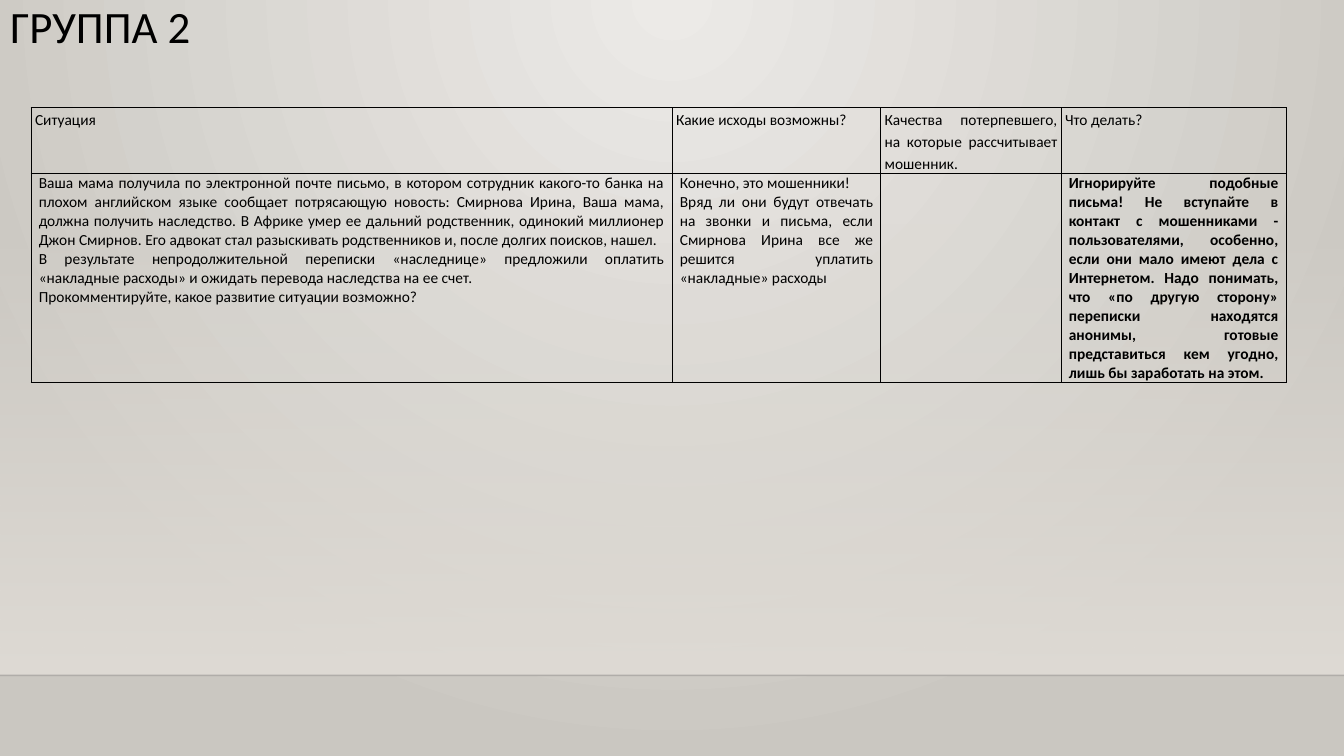
from dataclasses import dataclass

from lxml import etree
from pptx import Presentation
from pptx.dml.color import RGBColor
from pptx.enum import shapes, text
from pptx.oxml import ns
from pptx.util import Pt


@dataclass(frozen=True)
class Theme:
    font: str = "Calibri"
    ink: str = "000000"
    edge: str = "000001"
    glow: str = "ECEAE7"
    shade: str = "CAC7C1"
    wall: str = "DFDBD5"
    title: int = 32
    body: int = 11


THEME = Theme()
WIDTH, HEIGHT = 960, 540
FLOOR = 482.4
COLS = (457.9, 149, 128.9, 160.6)
ROWS = (46.8, 145)
HEADS = (
    "Ситуация",
    "Какие исходы возможны?",
    "Качества потерпевшего, на которые рассчитывает мошенник. ",
    "Что делать?",
)
STORY = (
    "Ваша мама получила по электронной почте письмо, в котором сотрудник "
    "какого-то банка на плохом английском языке сообщает потрясающую новость: "
    "Смирнова Ирина, Ваша мама, должна получить наследство. В Африке умер ее "
    "дальний родственник, одинокий миллионер Джон Смирнов. Его адвокат стал "
    "разыскивать родственников и, после долгих поисков, нашел. \n"
    "В результате непродолжительной переписки «наследнице» предложили оплатить "
    "«накладные расходы» и ожидать перевода наследства на ее счет. \n"
    "Прокомментируйте, какое развитие ситуации возможно?"
)
OUTCOME = (
    "Конечно, это мошенники! \n"
    "Вряд ли они будут отвечать на звонки и письма, если Смирнова Ирина все же "
    "решится уплатить «накладные» расходы"
)
ADVICE = (
    "Игнорируйте подобные письма! Не вступайте в контакт с мошенниками - "
    "пользователями, особенно, если они мало имеют дела с Интернетом. Надо "
    "понимать, что «по другую сторону» переписки находятся анонимы, готовые "
    "представиться кем угодно, лишь бы заработать на этом."
)
ANSWERS = (STORY, OUTCOME, "", ADVICE)


def rgb(code):
    return RGBColor.from_string(code)


def child(node, tag, **attrs):
    return etree.SubElement(node, ns.qn(tag), attrs)


def fade(node, percent):
    color = next(node.iter(ns.qn("a:srgbClr")))
    child(color, "a:alpha", val=str(percent * 1000))


def blend(fill, first, last):
    fill.gradient()
    for stop, code in zip(fill.gradient_stops, (first, last)):
        stop.color.rgb = rgb(code)


def style(para, size, bold=False):
    for run in para.runs:
        run.font.name = THEME.font
        run.font.size = Pt(size)
        run.font.bold = bold
        run.font.color.rgb = rgb(THEME.ink)


def add_back(slide):
    blend(slide.background.fill, THEME.glow, THEME.shade)
    grad = next(slide.element.iter(ns.qn("a:gradFill")))
    grad.remove(grad.find(ns.qn("a:lin")))
    ring = child(grad, "a:path", path="circle")
    child(ring, "a:fillToRect", l="43000", t="0", r="43000", b="100000")


def add_wall(slide):
    top = 159.1
    wall = slide.shapes.add_shape(
        shapes.MSO_SHAPE.RECTANGLE, 0, Pt(top), Pt(WIDTH), Pt(FLOOR - top)
    )
    wall.shadow.inherit = False
    wall.line.fill.background()
    blend(wall.fill, THEME.wall, THEME.wall)
    wall.fill.gradient_angle = 270
    fade(wall.element.spPr, 0)


def add_rule(slide):
    rule = slide.shapes.add_connector(
        shapes.MSO_CONNECTOR.STRAIGHT, 0, Pt(FLOOR), Pt(WIDTH), Pt(FLOOR)
    )
    rule.line.width = Pt(1)
    rule.line.color.rgb = rgb(THEME.edge)
    fade(rule.line._ln, 20)
    child(rule.element.spPr, "a:effectLst")


def set_title(slide, words):
    title = slide.shapes.title
    title.left, title.top, title.width, title.height = 0, 0, Pt(828), Pt(104.4)
    frame = title.text_frame
    frame.text = words
    frame.vertical_anchor = text.MSO_ANCHOR.TOP
    para = frame.paragraphs[0]
    para.alignment = text.PP_ALIGN.LEFT
    para.line_spacing = 0.9
    style(para, THEME.title)


def add_edges(cell):
    props = cell._tc.get_or_add_tcPr()
    for side in "LRTB":
        line = child(props, f"a:ln{side}", w=str(Pt(1)))
        child(child(line, "a:solidFill"), "a:srgbClr", val=THEME.ink)


def fill_cell(cell, words, inset, space, bold):
    add_edges(cell)
    cell.fill.background()
    cell.margin_left = cell.margin_right = Pt(inset)
    cell.margin_top = cell.margin_bottom = 0
    cell.text_frame.text = words
    for para in cell.text_frame.paragraphs:
        para.alignment = text.PP_ALIGN.JUSTIFY
        para.line_spacing = space
        style(para, THEME.body, bold)


def add_grid(slide):
    frame = slide.shapes.add_table(
        len(ROWS), len(COLS), Pt(22.3), Pt(77), Pt(sum(COLS)), Pt(sum(ROWS))
    )
    table = frame.table
    table.first_row = table.horz_banding = False
    for col, width in zip(table.columns, COLS):
        col.width = Pt(width)
    for row, height in zip(table.rows, ROWS):
        row.height = Pt(height)
    for i, (head, answer) in enumerate(zip(HEADS, ANSWERS)):
        fill_cell(table.cell(0, i), head, 2.7, 1.15, False)
        fill_cell(table.cell(1, i), answer, 5.4, 1.0, answer == ADVICE)


def main():
    deck = Presentation()
    deck.slide_width, deck.slide_height = Pt(WIDTH), Pt(HEIGHT)
    slide = deck.slides.add_slide(deck.slide_layouts[5])
    add_back(slide)
    add_wall(slide)
    add_rule(slide)
    set_title(slide, "ГРУППА 2")
    add_grid(slide)
    deck.save("out.pptx")


if __name__ == "__main__":
    main()
